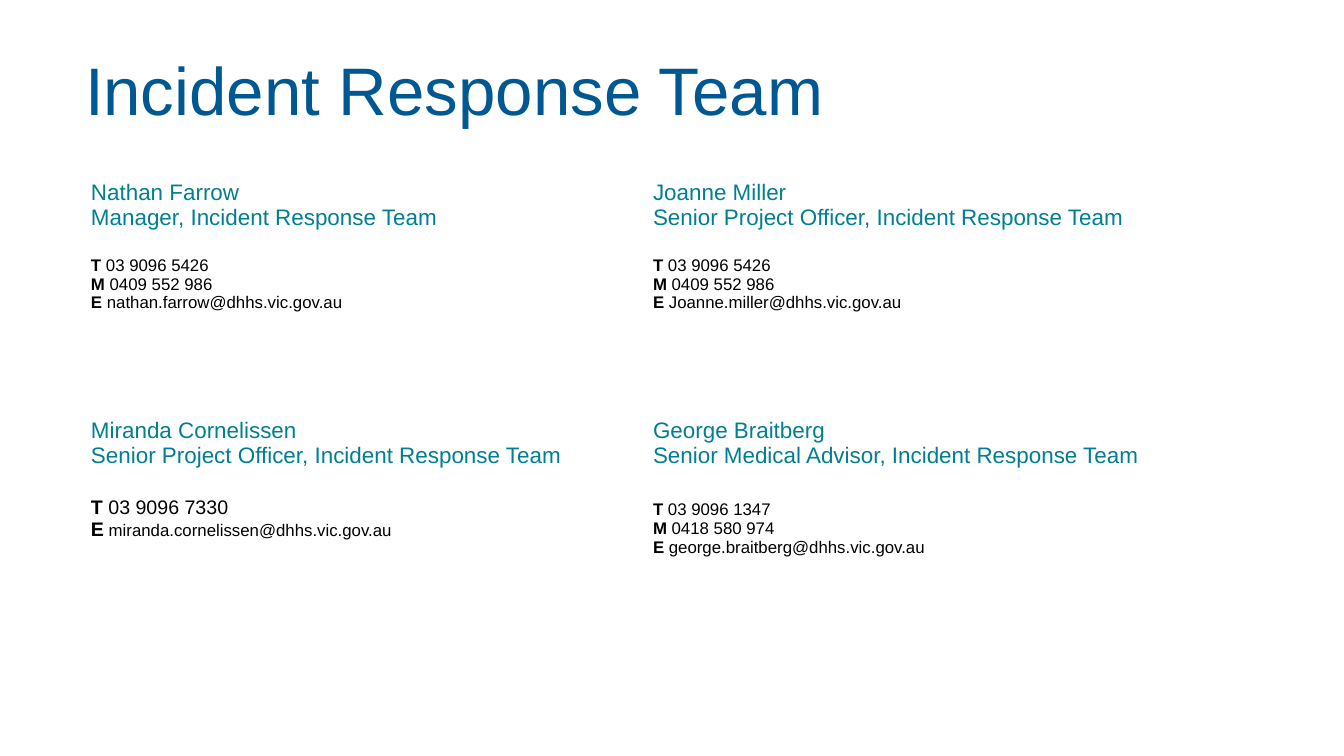
import pptx
import pptx.dml.color
import pptx.enum.text
import pptx.util

# Content: name, role, gap above the contact lines (pt), (label, label size, value, value size)
TITLE = "Incident Response Team"
TEAM = [
    [
        ("Nathan Farrow", "Manager, Incident Response Team", 37, [
            ("T", 24, "03 9096 5426", 24),
            ("M", 24, "0409 552 986", 24),
            ("E", 24, "nathan.farrow@dhhs.vic.gov.au", 24)]),
        ("Joanne Miller", "Senior Project Officer, Incident Response Team", 37, [
            ("T", 24, "03 9096 5426", 24),
            ("M", 24, "0409 552 986", 24),
            ("E", 24, "Joanne.miller@dhhs.vic.gov.au", 24)]),
    ],
    [
        ("Miranda Cornelissen", "Senior Project Officer, Incident Response Team", 41, [
            ("T", 28, "03 9096 7330", 28),
            ("E", 28, "miranda.cornelissen@dhhs.vic.gov.au", 24)]),
        ("George Braitberg", "Senior Medical Advisor, Incident Response Team", 46, [
            ("T", 24, "03 9096 1347", 24),
            ("M", 24, "0418 580 974", 24),
            ("E", 24, "george.braitberg@dhhs.vic.gov.au", 24)]),
    ],
]

BLUE = pptx.dml.color.RGBColor(0x00, 0x58, 0x92)
TEAL = pptx.dml.color.RGBColor(0x00, 0x7F, 0x92)
BLACK = pptx.dml.color.RGBColor(0x00, 0x00, 0x00)
WHITE = pptx.dml.color.RGBColor(0xFF, 0xFF, 0xFF)
FONT = "Arial"
EMU_PER_PX = 914400 / 50.4
COLUMN_WIDTH = 562
ROW_HEIGHTS = [238, 272]


def px(length):
    return pptx.util.Emu(round(length * EMU_PER_PX))


def add_span(para, text, size, colour, bold=False):
    span = para.add_run()
    span.text = text
    span.font.name = FONT
    span.font.size = pptx.util.Pt(size)
    span.font.bold = bold
    span.font.color.rgb = colour


def fill_contact(cell, name, role, gap, lines):
    cell.fill.solid()
    cell.fill.fore_color.rgb = WHITE
    cell.margin_left = cell.margin_right = px(14)
    cell.margin_top = cell.margin_bottom = px(5)
    frame = cell.text_frame
    add_span(frame.paragraphs[0], name, 32, TEAL)
    add_span(frame.add_paragraph(), role, 32, TEAL)
    for index, (label, label_size, value, value_size) in enumerate(lines):
        para = frame.add_paragraph()
        if index == 0:
            para.space_before = pptx.util.Pt(gap)
        add_span(para, label, label_size, BLACK, bold=True)
        add_span(para, " " + value, value_size, BLACK)


def main():
    deck = pptx.Presentation()
    deck.slide_width, deck.slide_height = px(1344), px(756)
    page = deck.slides.add_slide(deck.slide_layouts[5])

    # Title
    title = page.shapes.title
    title.left, title.top, title.width, title.height = px(85), px(62), px(1167), px(64)
    frame = title.text_frame
    frame.auto_size = pptx.enum.text.MSO_AUTO_SIZE.NONE
    frame.vertical_anchor = pptx.enum.text.MSO_ANCHOR.MIDDLE
    frame.margin_left = frame.margin_top = frame.margin_right = frame.margin_bottom = 0
    para = frame.paragraphs[0]
    para.alignment = pptx.enum.text.PP_ALIGN.LEFT
    para.line_spacing = 0.9
    add_span(para, TITLE, 96, BLUE)

    # Contact grid
    column_count = len(TEAM[0])
    table = page.shapes.add_table(
        len(TEAM), column_count, px(77), px(175),
        px(COLUMN_WIDTH * column_count), px(sum(ROW_HEIGHTS))).table
    table.first_row = table.horz_banding = False
    for column in table.columns:
        column.width = px(COLUMN_WIDTH)
    for row, height, people in zip(table.rows, ROW_HEIGHTS, TEAM):
        row.height = px(height)
        for cell, person in zip(row.cells, people):
            fill_contact(cell, *person)

    deck.save("out.pptx")


if __name__ == "__main__":
    main()
